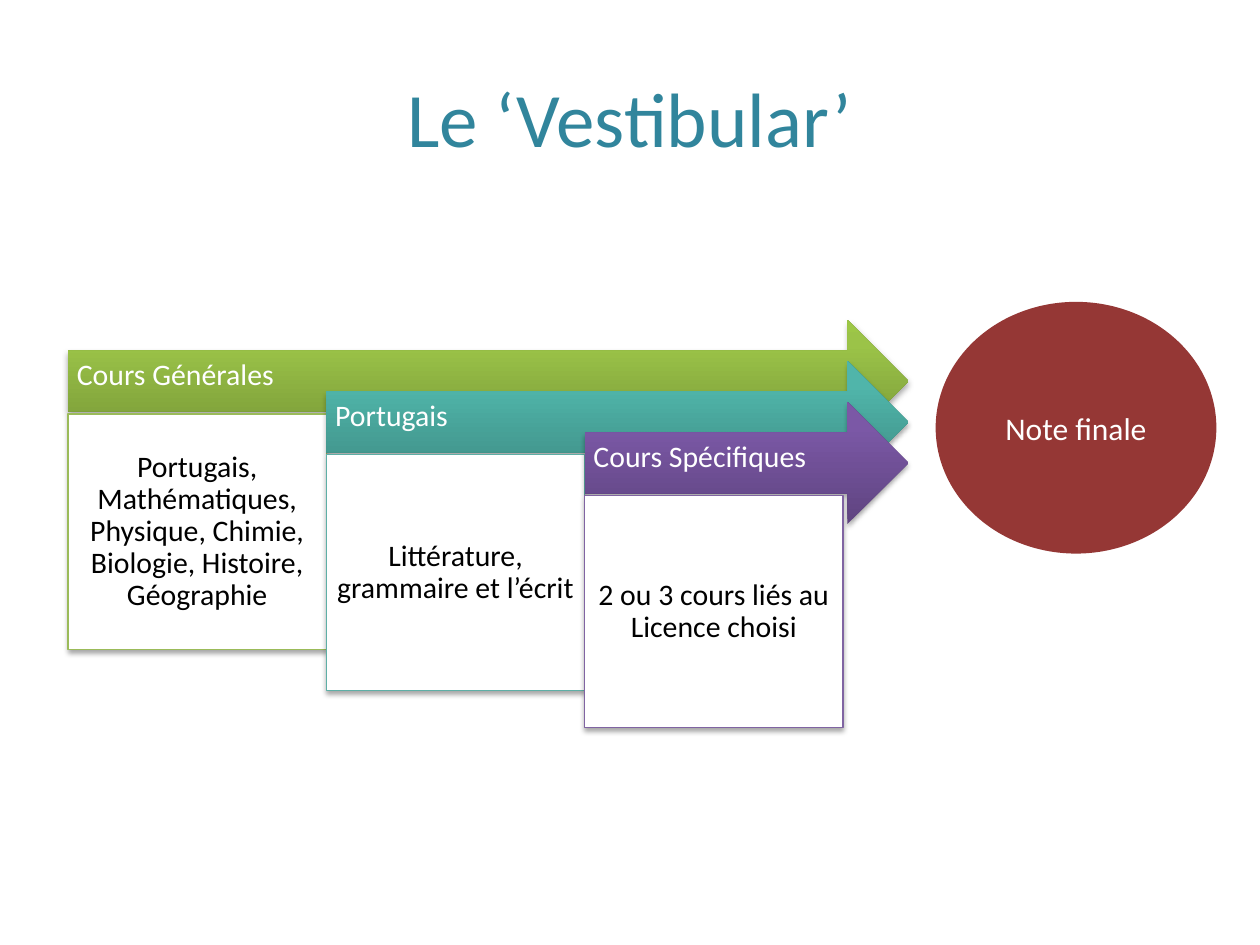
from lxml.etree import SubElement
from pptx import Presentation
from pptx.dml.color import RGBColor
from pptx.enum.shapes import MSO_SHAPE as Shape
from pptx.enum.text import MSO_ANCHOR as Anchor, PP_ALIGN as Align
from pptx.oxml.ns import qn
from pptx.util import Inches, Pt

COLORS = {
    "title": "31859C",
    "white": "FFFFFF",
    "black": "000000",
    "grade": "953735",
}
# heading, courses, box height, outline, gradient from bottom to top
STEPS = [
    ("Cours Générales",
     "Portugais, Mathématiques, Physique, Chimie, Biologie, Histoire, Géographie",
     1.87, "9BBB59", ("779737", "9BC348", "9DC746")),
    ("Portugais", "Littérature, grammaire et l’écrit",
     1.87, "5EAFA6", ("3D8B83", "50B5AA", "4EB8AC")),
    ("Cours Spécifiques", "2 ou 3 cours liés au Licence choisi",
     1.84, "8064A2", ("5F4480", "7B58A6", "7C57A8")),
]
GRADIENT_STOPS = (0, 80, 100)

# Each step moves one column right and one row down; all arrows end together.
LEFT, TOP, RIGHT = 0.54, 2.54, 7.21
COLUMN, ROW = 2.05, 0.325
ARROW_HEIGHT, BOX_DROP = 0.97, 0.745


def rgb(value):
    return RGBColor.from_string(value)


def set_text(shape, text, size, color, align=Align.CENTER, insets=None, spacing=None):
    frame = shape.text_frame
    frame.word_wrap = True
    frame.vertical_anchor = Anchor.MIDDLE
    if insets:
        (frame.margin_left, frame.margin_top,
         frame.margin_right, frame.margin_bottom) = map(Inches, insets)
    para = frame.paragraphs[0]
    para.text = text
    para.alignment = align
    para.line_spacing = spacing
    para.font.size = Pt(size)
    para.font.name = "Calibri"
    para.font.color.rgb = rgb(color)


def add_shape(slide, kind, place, fill=None, line=None, width=0.75):
    shape = slide.shapes.add_shape(kind, *map(Inches, place))
    shape.shadow.inherit = False
    if fill:
        shape.fill.solid()
        shape.fill.fore_color.rgb = rgb(fill)
    if line:
        shape.line.color.rgb = rgb(line)
        shape.line.width = Pt(width)
    else:
        shape.line.fill.background()
    return shape


def add_shadow(shape):
    """Cast a soft shadow straight down."""
    effects = shape._element.spPr.find(qn("a:effectLst"))
    shadow = SubElement(effects, qn("a:outerShdw"), blurRad=str(Pt(3.1)),
                        dist=str(Pt(1.8)), dir="5400000", rotWithShape="0")
    color = SubElement(shadow, qn("a:srgbClr"), val=COLORS["black"])
    SubElement(color, qn("a:alpha"), val="35000")


def set_gradient(shape, colors):
    """Fill from bottom to top with one color per gradient stop."""
    shape.fill.gradient()
    gradient = shape._element.spPr.find(qn("a:gradFill"))
    for child in list(gradient):
        gradient.remove(child)
    stops = SubElement(gradient, qn("a:gsLst"))
    for position, color in zip(GRADIENT_STOPS, colors):
        stop = SubElement(stops, qn("a:gs"), pos=str(position * 1000))
        SubElement(stop, qn("a:srgbClr"), val=color)
    SubElement(gradient, qn("a:lin"), ang="16200000", scaled="0")


def add_step(slide, index, heading, courses, box_height, outline, gradient):
    left, top = LEFT + index * COLUMN, TOP + index * ROW

    arrow = add_shape(slide, Shape.RIGHT_ARROW, (left, top, RIGHT - left, ARROW_HEIGHT))
    set_gradient(arrow, gradient)
    add_shadow(arrow)
    set_text(arrow, heading, 17, COLORS["white"], Align.LEFT,
             (0.07, 0.07, 0.28, 0.15), 0.9)

    box = add_shape(slide, Shape.RECTANGLE, (left, top + BOX_DROP, COLUMN, box_height),
                    COLORS["white"], outline)
    add_shadow(box)
    set_text(box, courses, 17, COLORS["black"], insets=(0.07,) * 4, spacing=0.9)


def main():
    deck = Presentation()
    deck.slide_width, deck.slide_height = Inches(10), Inches(7.5)
    slide = deck.slides.add_slide(deck.slide_layouts[6])

    title = slide.shapes.add_textbox(*map(Inches, (0.5, 0.3, 9, 1.25)))
    set_text(title, "Le ‘Vestibular’", 44, COLORS["title"])

    for index, step in enumerate(STEPS):
        add_step(slide, index, *step)

    grade = add_shape(slide, Shape.OVAL, (7.44, 2.41, 2.2, 1.97),
                      COLORS["grade"], COLORS["grade"], 2)
    set_text(grade, "Note finale", 18, COLORS["white"])
    deck.save("out.pptx")


if __name__ == "__main__":
    main()
